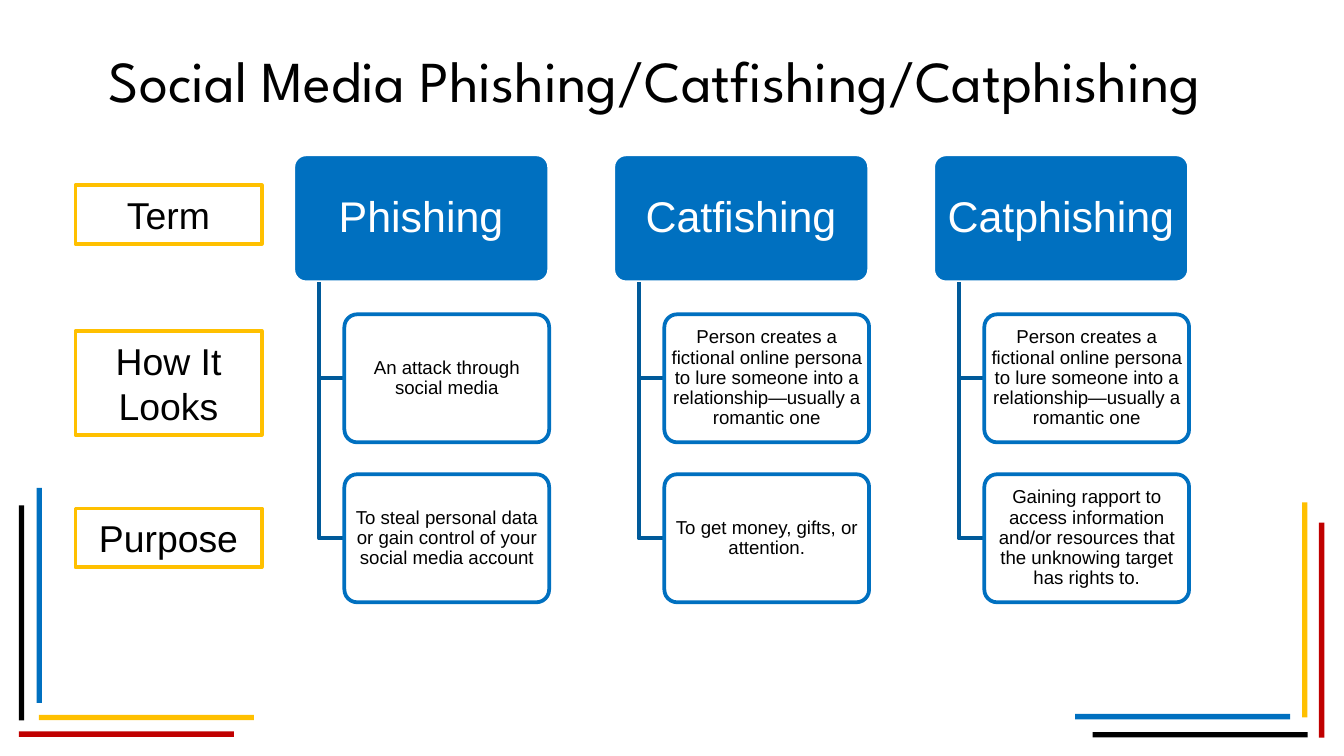
"""Build the slide comparing phishing, catfishing and catphishing."""
from pptx import Presentation
from pptx.dml.color import RGBColor
from pptx.enum.shapes import MSO_SHAPE
from pptx.enum.text import MSO_ANCHOR, MSO_AUTO_SIZE, PP_ALIGN
from pptx.util import Pt

RECT, ROUND = MSO_SHAPE.RECTANGLE, MSO_SHAPE.ROUNDED_RECTANGLE
MIDDLE, CENTER, NO_FIT = MSO_ANCHOR.MIDDLE, PP_ALIGN.CENTER, MSO_AUTO_SIZE.NONE
COLORS = {"black": "000000", "white": "FFFFFF", "red": "C00000",
          "yellow": "FFC000", "blue": "0070C0", "navy": "005A9A"}
RGB = {name: RGBColor.from_string(value) for name, value in COLORS.items()}


def add_box(kind, x, y, w, h, fill, line=None):
    sp = s.shapes.add_shape(kind, Pt(x), Pt(y), Pt(w), Pt(h))
    sp.shadow.inherit = False
    sp.fill.solid()
    sp.fill.fore_color.rgb = RGB[fill]
    if line:
        sp.line.color.rgb = RGB[line]
        sp.line.width = Pt(2)
    else:
        sp.line.fill.background()
    if kind == ROUND:
        sp.adjustments[0] = 0.1
    return sp


def set_text(sp, text, size, color, font="Arial", inset=(7.2, 3.6), spacing=1):
    tf = sp.text_frame
    tf.text = text
    tf.word_wrap = True
    tf.auto_size = NO_FIT
    tf.vertical_anchor = MIDDLE
    tf.margin_left = tf.margin_right = Pt(inset[0])
    tf.margin_top = tf.margin_bottom = Pt(inset[1])
    p = tf.paragraphs[0]
    p.alignment = CENTER
    p.line_spacing = spacing
    p.font.name = font
    p.font.size = Pt(size)
    p.font.color.rgb = RGB[color]


prs = Presentation()
prs.slide_width, prs.slide_height = Pt(720), Pt(405)
s = prs.slides.add_slide(prs.slide_layouts[5])

title = s.shapes.title
title.left, title.top, title.width, title.height = Pt(46.8), Pt(10.8), Pt(607.7), Pt(63.4)
set_text(title, "Social Media Phishing/Catfishing/Catphishing", 31, "black",
         font="League Spartan", inset=(5, 2.9))

BAR_LENGTH, BAR_WIDTH = 115.2, 2.9
for x, y, color in [(10.1, 270.8, "black"), (19.6, 261.4, "blue"),
                    (706.6, 280, "red"), (697.6, 269.2, "yellow")]:
    add_box(RECT, x, y, BAR_WIDTH, BAR_LENGTH, color)
for x, y, color in [(10.1, 391.9, "red"), (20.9, 383, "yellow"),
                    (585.4, 392.2, "black"), (576, 382.5, "blue")]:
    add_box(RECT, x, y, BAR_LENGTH, BAR_WIDTH, color)

catfish_look = ("Person creates a fictional online persona to lure someone into "
                "a relationship—usually a romantic one")
terms = [
    ("Phishing", "An attack through social media",
     "To steal personal data or gain control of your social media account"),
    ("Catfishing", catfish_look, "To get money, gifts, or attention."),
    ("Catphishing", catfish_look,
     "Gaining rapport to access information and/or resources that the "
     "unknowing target has rights to."),
]
LEFT, TOP, COL_STEP, ROW_STEP = 157.1, 82.7, 171.4, 85.7
TERM_W, DETAIL_W, BOX_H = 137.1, 109.7, 68.6
for col, (term, *details) in enumerate(terms):
    x = LEFT + col * COL_STEP
    sp = add_box(ROUND, x, TOP, TERM_W, BOX_H, "blue", "white")
    set_text(sp, term, 23, "white", inset=(3.4, 2.3), spacing=0.9)
    stem_x, detail_x = x + TERM_W * 0.1, x + TERM_W * 0.2
    for row, detail in enumerate(details, 1):
        y = TOP + row * ROW_STEP
        mid_y = y + BOX_H / 2
        fb = s.shapes.build_freeform(Pt(stem_x), Pt(TOP + BOX_H))
        fb.add_line_segments([(Pt(stem_x), Pt(mid_y)), (Pt(detail_x), Pt(mid_y))],
                             close=False)
        elbow = fb.convert_to_shape()
        elbow.shadow.inherit = False
        elbow.fill.background()
        elbow.line.color.rgb = RGB["navy"]
        elbow.line.width = Pt(2)
        sp = add_box(ROUND, detail_x, y, DETAIL_W, BOX_H, "white", "blue")
        set_text(sp, detail, 10, "black", inset=(1.5, 1), spacing=0.9)

for label, y, h in [("Term", 99.2, 31.5), ("How It Looks", 177.3, 55.7),
                    ("Purpose", 272.4, 31.5)]:
    sp = add_box(RECT, 40.4, y, 99.8, h, "white", "yellow")
    set_text(sp, label, 20, "black")

prs.save("out.pptx")
